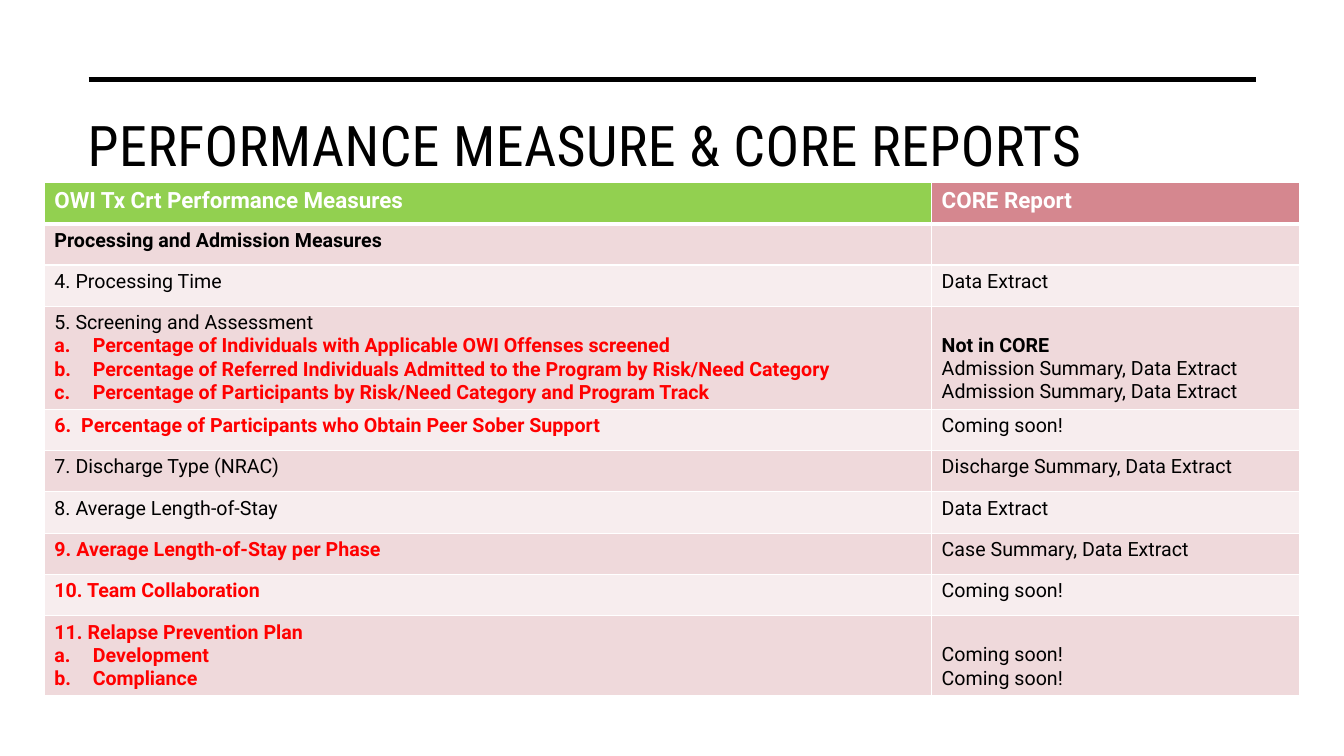
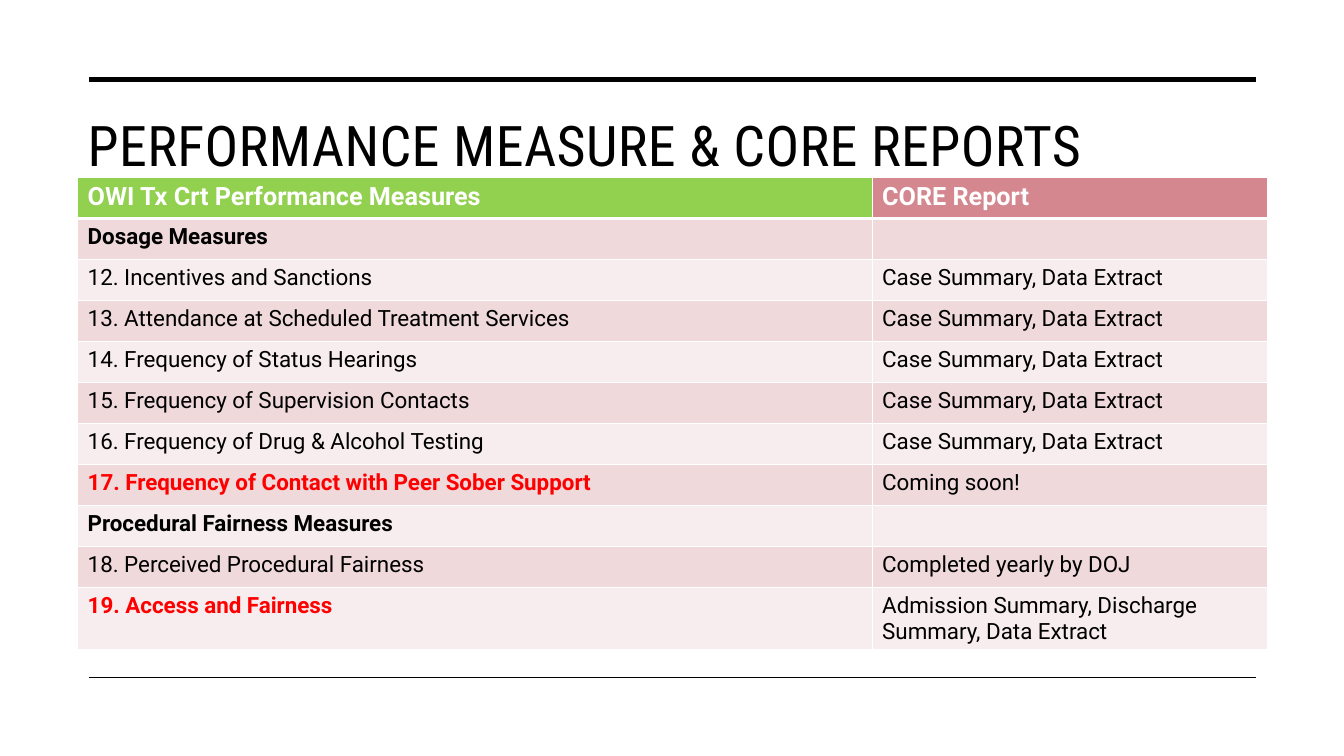
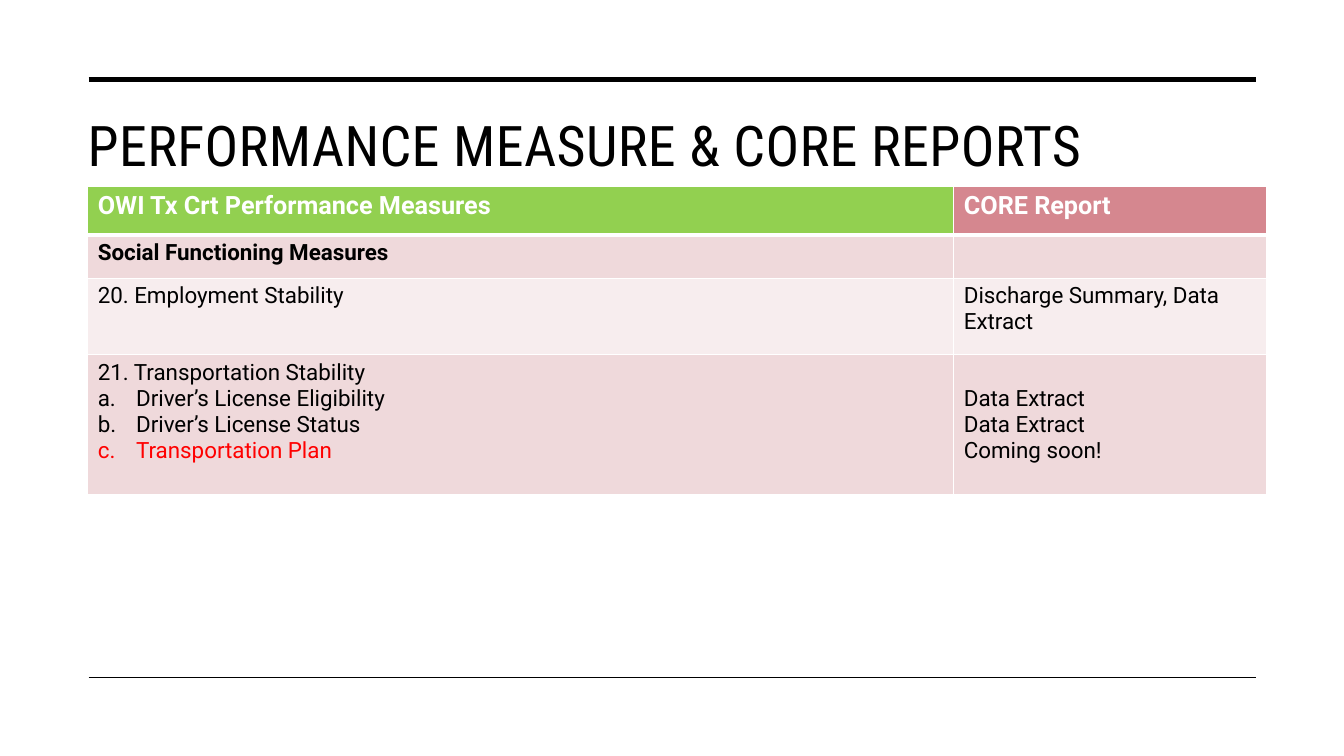
from dataclasses import dataclass
from typing import Optional

from lxml import etree
from pptx import Presentation
from pptx.dml.color import RGBColor
from pptx.enum.shapes import MSO_CONNECTOR as Connector
from pptx.enum.text import MSO_ANCHOR as Anchor, MSO_AUTO_SIZE as AutoSize, PP_ALIGN as Align
from pptx.oxml.ns import qn
from pptx.util import Inches, Pt


@dataclass(frozen=True)
class Theme:
    ink: str = "000000"
    paper: str = "FFFFFF"
    alert: str = "FF0000"
    measure_head: str = "92D050"
    report_head: str = "D5878F"
    bands: tuple = ("EFD9DB", "F7EDEE")
    title_font: str = "Roboto Condensed"
    body_font: str = "Roboto"
    title_size: int = 40
    title_spacing: str = "30"
    grid_width: float = 1
    head_rule_width: float = 3
    cell_margin: float = 0.05
    list_indent: float = 0.38
    line_height: float = 1.17


THEME = Theme()
TITLE = "PERFORMANCE MEASURE & CORE REPORTS"
HEADINGS = ("OWI Tx Crt Performance Measures", "CORE Report")


@dataclass
class Box:
    left: float
    top: float
    width: float
    height: float


@dataclass
class Line:
    text: str
    color: str = THEME.ink
    bold: bool = False
    lettered: bool = False


@dataclass
class Row:
    measures: list
    reports: list
    height: Optional[float] = None
    skipped_lines: int = 0


@dataclass
class MeasureTable:
    box: Box
    measure_width: float
    head_size: int
    body_size: int
    rows: list
    head_height: Optional[float] = None


def strong(text, lettered=False):
    return Line(text, bold=True, lettered=lettered)


def added(text, lettered=False):
    return Line(text, THEME.alert, True, lettered)


def row(measure, *reports):
    first = measure if isinstance(measure, Line) else Line(measure)
    return Row([first], [Line(report) for report in reports])


TABLES = [
    MeasureTable(
        Box(0.44, 1.81, 12.45, 5.08), 8.8, 16, 14,
        [
            row(strong("Processing and Admission Measures")),
            row("4. Processing Time", "Data Extract"),
            Row(
                [
                    Line("5. Screening and Assessment"),
                    added("Percentage of Individuals with Applicable OWI Offenses screened", True),
                    added("Percentage of Referred Individuals Admitted to the Program by Risk/Need Category", True),
                    added("Percentage of Participants by Risk/Need Category and Program Track", True),
                ],
                [
                    strong("Not in CORE"),
                    Line("Admission Summary, Data Extract"),
                    Line("Admission Summary, Data Extract"),
                ],
                height=1.02, skipped_lines=1,
            ),
            row(added("6.  Percentage of Participants who Obtain Peer Sober Support"), "Coming soon!"),
            row("7. Discharge Type (NRAC)", "Discharge Summary, Data Extract"),
            row("8. Average Length-of-Stay", "Data Extract"),
            row(added("9. Average Length-of-Stay per Phase"), "Case Summary, Data Extract"),
            row(added("10. Team Collaboration"), "Coming soon!"),
            Row(
                [
                    added("11. Relapse Prevention Plan"),
                    added("Development", True),
                    added("Compliance", True),
                ],
                [Line("Coming soon!"), Line("Coming soon!")],
                height=0.78, skipped_lines=1,
            ),
        ],
    ),
    MeasureTable(
        Box(0.77, 1.76, 11.8, 4.69), 7.88, 18, 16,
        [
            row(strong("Dosage Measures")),
            row("12. Incentives and Sanctions", "Case Summary, Data Extract"),
            row("13. Attendance at Scheduled Treatment Services", "Case Summary, Data Extract"),
            row("14. Frequency of Status Hearings", "Case Summary, Data Extract"),
            row("15. Frequency of Supervision Contacts", "Case Summary, Data Extract"),
            row("16. Frequency of Drug & Alcohol Testing", "Case Summary, Data Extract"),
            row(added("17. Frequency of Contact with Peer Sober Support"), "Coming soon!"),
            row(strong("Procedural Fairness Measures")),
            row("18. Perceived Procedural Fairness", "Completed yearly by DOJ"),
            Row(
                [added("19. Access and Fairness")],
                [Line("Admission Summary, Discharge Summary, Data Extract")],
                height=0.62,
            ),
        ],
    ),
    MeasureTable(
        Box(0.87, 1.85, 11.69, 3.06), 8.59, 18, 16,
        [
            row(strong("Social Functioning Measures")),
            Row(
                [Line("20. Employment Stability")],
                [Line("Discharge Summary, Data Extract")],
                height=0.76,
            ),
            Row(
                [
                    Line("21. Transportation Stability"),
                    Line("Driver’s License Eligibility", lettered=True),
                    Line("Driver’s License Status", lettered=True),
                    Line("Transportation Plan", THEME.alert, lettered=True),
                ],
                [Line("Data Extract"), Line("Data Extract"), Line("Coming soon!")],
                height=1.39, skipped_lines=1,
            ),
        ],
        head_height=0.48,
    ),
]


def style_runs(para, font, size, color, bold=False):
    for span in para.runs:
        span.font.name = font
        span.font.size = Pt(size)
        span.font.bold = bold
        span.font.color.rgb = RGBColor.from_string(color)


def add_master_rules(deck, page):
    for top, width in ((0.79, 3.5), (6.72, 1)):
        rule = page.shapes.add_connector(
            Connector.STRAIGHT, Inches(0.88), Inches(top), Inches(12.46), Inches(top)
        )
        rule.line.width = Pt(width)
        rule.line.color.rgb = RGBColor.from_string(THEME.ink)
        etree.SubElement(rule.element.spPr, qn("a:effectLst"))
        deck.slide_master.shapes.element.append(rule.element)


def add_title(page, box):
    title = page.shapes.title
    title.left, title.top = Inches(box.left), Inches(box.top)
    title.width, title.height = Inches(box.width), Inches(box.height)
    frame = title.text_frame
    frame.text = TITLE
    frame.word_wrap = True
    frame.auto_size = AutoSize.NONE
    frame.vertical_anchor = Anchor.TOP
    frame.margin_top = Inches(0.09)
    para = frame.paragraphs[0]
    para.alignment = Align.LEFT
    style_runs(para, THEME.title_font, THEME.title_size, THEME.ink)
    for properties in title.element.iter(qn("a:rPr")):
        properties.set("spc", THEME.title_spacing)


def letter_paragraph(para):
    properties = para._p.get_or_add_pPr()
    indent = Inches(THEME.list_indent)
    properties.set("marL", str(indent))
    properties.set("indent", str(-indent))
    etree.SubElement(properties, qn("a:buAutoNum"), type="alphaLcPeriod")


def draw_borders(cell, top_width, bottom_width):
    properties = cell._tc.get_or_add_tcPr()
    grid = THEME.grid_width
    for side, width in (("L", grid), ("R", grid), ("T", top_width), ("B", bottom_width)):
        border = etree.SubElement(properties, qn(f"a:ln{side}"), w=str(Pt(width)))
        fill = etree.SubElement(border, qn("a:solidFill"))
        etree.SubElement(fill, qn("a:srgbClr"), val=THEME.paper)


def fill_cell(cell, lines, size, color, skipped_lines=0):
    cell.fill.solid()
    cell.fill.fore_color.rgb = RGBColor.from_string(color)
    gap = skipped_lines * size * THEME.line_height / 72
    cell.margin_top = Inches(THEME.cell_margin + gap)
    frame = cell.text_frame
    frame.text = "\n".join(line.text for line in lines)
    for para, line in zip(frame.paragraphs, lines):
        style_runs(para, THEME.body_font, size, line.color, line.bold)
        if line.lettered:
            letter_paragraph(para)


def add_measure_table(page, content):
    box = content.box
    table = page.shapes.add_table(
        len(content.rows) + 1, 2,
        Inches(box.left), Inches(box.top), Inches(box.width), Inches(box.height),
    ).table
    table.columns[0].width = Inches(content.measure_width)
    table.columns[1].width = Inches(box.width - content.measure_width)

    heights = [content.head_height] + [entry.height for entry in content.rows]
    shared = (box.height - sum(filter(None, heights))) / heights.count(None)
    for table_row, height in zip(table.rows, heights):
        table_row.height = Inches(height or shared)

    thin, thick = THEME.grid_width, THEME.head_rule_width
    for column, color in enumerate((THEME.measure_head, THEME.report_head)):
        cell = table.cell(0, column)
        draw_borders(cell, thin, thick)
        fill_cell(cell, [Line(HEADINGS[column], THEME.paper, True)], content.head_size, color)

    for index, entry in enumerate(content.rows):
        band = THEME.bands[index % 2]
        columns = ((entry.measures, 0), (entry.reports, entry.skipped_lines))
        for column, (lines, skipped) in enumerate(columns):
            cell = table.cell(index + 1, column)
            draw_borders(cell, thin if index else thick, thin)
            fill_cell(cell, lines, content.body_size, band, skipped)


def main():
    deck = Presentation()
    deck.slide_width, deck.slide_height = Inches(13.33), Inches(7.5)
    title_only = deck.slide_layouts[5]
    for number, content in enumerate(TABLES):
        page = deck.slides.add_slide(title_only)
        if number == 0:
            add_master_rules(deck, page)
        add_title(page, Box(0.77, 1.01, 11.69, 1.03))
        add_measure_table(page, content)
    deck.save("out.pptx")


if __name__ == "__main__":
    main()
